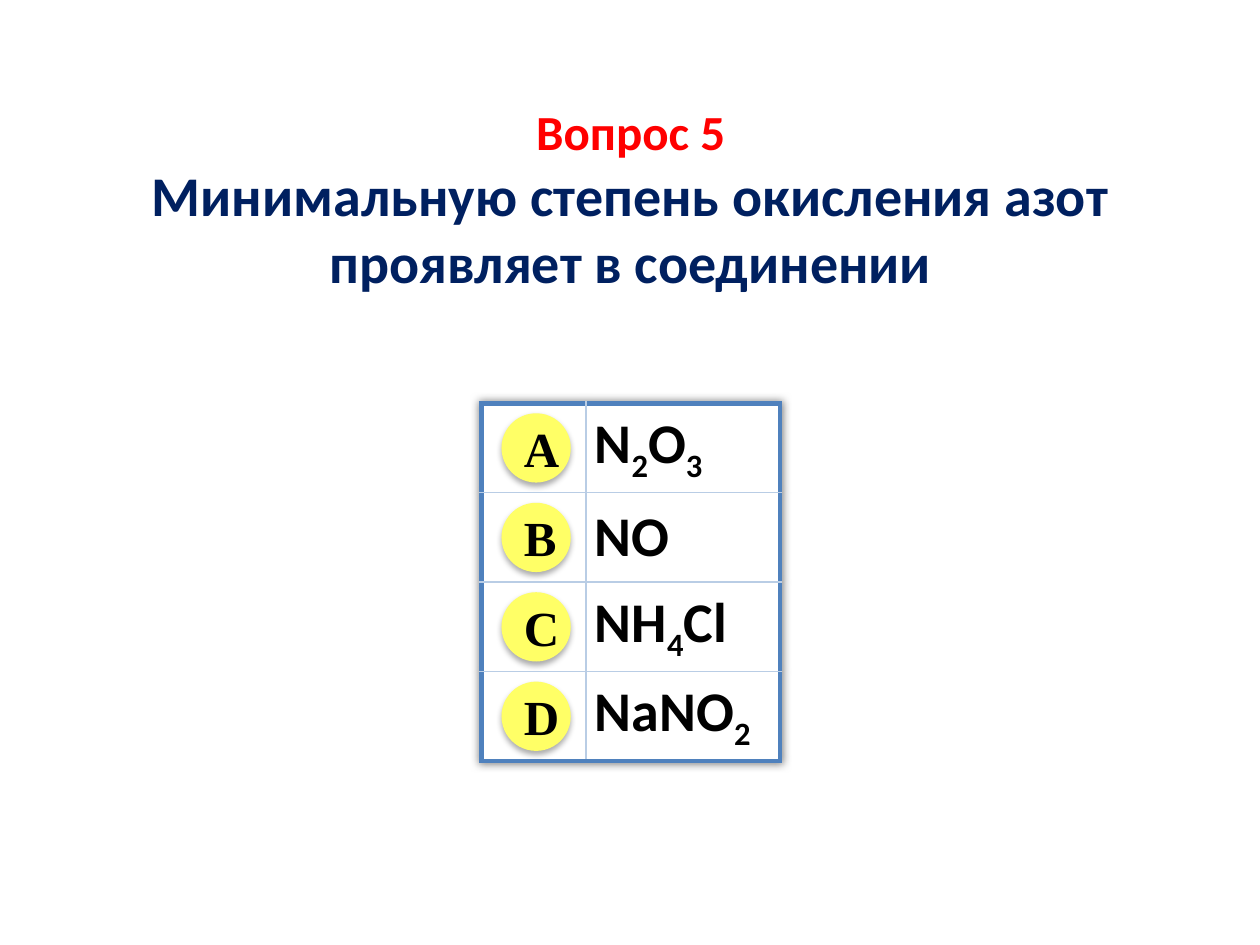
from dataclasses import dataclass
from itertools import groupby

from lxml import etree
from pptx import Presentation
from pptx import util as u
from pptx.dml.color import RGBColor
from pptx.enum import shapes, text
from pptx.oxml.ns import qn


@dataclass(frozen=True)
class Theme:
    body_font: str = "Calibri"
    letter_font: str = "Times New Roman"
    small: int = 28
    large: int = 32
    white: str = "FFFFFF"
    black: str = "000000"
    red: str = "FF0000"
    navy: str = "002060"
    frame: str = "4F81BD"
    grid: str = "B9CDE5"
    badge: str = "FFFF66"


def add_element(parent, tag, **attributes):
    return etree.SubElement(parent, qn(tag), {k: str(v) for k, v in attributes.items()})


def shadow_effect(parent, color, opacity, blur, distance, angle):
    """Append an outer shadow; opacity in percent, lengths in points."""
    effects = add_element(parent, "a:effectLst")
    outer = add_element(effects, "a:outerShdw", blurRad=u.Pt(blur), dist=u.Pt(distance),
                        dir=angle * 60000, algn="ctr", rotWithShape=0)
    add_element(add_element(outer, "a:srgbClr", val=color), "a:alpha", val=opacity * 1000)
    return effects


class QuizSlide:
    def __init__(self, slide, theme):
        self.slide = slide
        self.theme = theme

    def style(self, run, font, size, color):
        run.font.name = font
        run.font.size = u.Pt(size)
        run.font.bold = True
        run.font.color.rgb = RGBColor.from_string(color)

    def fill(self, target, color):
        target.fill.solid()
        target.fill.fore_color.rgb = RGBColor.from_string(color)

    def formula(self, cell, formula):
        """Write a chemical formula with its digits as subscripts."""
        paragraph = cell.text_frame.paragraphs[0]
        for is_index, letters in groupby(formula, str.isdigit):
            run = paragraph.add_run()
            run.text = "".join(letters)
            self.style(run, self.theme.body_font, self.theme.large, self.theme.black)
            if is_index:
                run.font._element.set("baseline", "-25000")

    def borders(self, cell, outer_sides):
        properties = cell._tc.get_or_add_tcPr()
        for side in "LRTB":
            outer = side in outer_sides
            line = add_element(properties, f"a:ln{side}", w=u.Pt(3 if outer else 1))
            solid = add_element(line, "a:solidFill")
            add_element(solid, "a:srgbClr", val=self.theme.frame if outer else self.theme.grid)

    def answers(self, formulas, left, top, widths, row_height):
        last = len(formulas) - 1
        frame = self.slide.shapes.add_table(
            len(formulas), len(widths), u.Inches(left), u.Inches(top),
            u.Inches(sum(widths)), u.Inches(row_height * len(formulas)))
        table = frame.table
        table.first_row = table.horz_banding = False
        properties = table._tbl.tblPr
        properties.insert(0, shadow_effect(properties, self.theme.black, 50, 5, 0, 0))
        for column, width in zip(table.columns, widths):
            column.width = u.Inches(width)
        for row, formula in enumerate(formulas):
            table.rows[row].height = u.Inches(row_height)
            for column in range(len(widths)):
                cell = table.cell(row, column)
                cell.margin_left = cell.margin_right = u.Inches(0.07)
                cell.margin_top = cell.margin_bottom = 0
                cell.vertical_anchor = text.MSO_ANCHOR.MIDDLE
                edges = "LR"[column] + ("T" if row == 0 else "B" if row == last else "")
                self.borders(cell, edges)
                self.fill(cell, self.theme.white)
            self.formula(table.cell(row, 1), formula)

    def badges(self, letters, left, top, size, step):
        group = self.slide.shapes.add_group_shape()
        for row, letter in enumerate(letters):
            badge = group.shapes.add_shape(
                shapes.MSO_SHAPE.OVAL, u.Inches(left), u.Inches(top + row * step),
                u.Inches(size), u.Inches(size))
            self.fill(badge, self.theme.badge)
            badge.line.fill.background()
            shadow_effect(badge._element.spPr, self.theme.black, 32, 3.5, 2.2, 90)
            frame = badge.text_frame
            frame.text = letter
            frame.word_wrap = True
            frame.vertical_anchor = text.MSO_ANCHOR.MIDDLE
            frame.paragraphs[0].alignment = text.PP_ALIGN.CENTER
            self.style(frame.paragraphs[0].runs[0], self.theme.letter_font,
                       self.theme.small, self.theme.black)

    def question(self, number, wording, left, top, width, height):
        box = self.slide.shapes.add_textbox(*map(u.Inches, (left, top, width, height)))
        self.fill(box, self.theme.white)
        frame = box.text_frame
        frame.word_wrap = True
        frame.auto_size = text.MSO_AUTO_SIZE.SHAPE_TO_FIT_TEXT
        frame.text = f"{number}\n{wording}"
        looks = [(self.theme.small, self.theme.red), (self.theme.large, self.theme.navy)]
        for paragraph, (size, color) in zip(frame.paragraphs, looks):
            paragraph.alignment = text.PP_ALIGN.CENTER
            self.style(paragraph.runs[0], self.theme.body_font, size, color)


def main():
    deck = Presentation()
    deck.slide_width, deck.slide_height = u.Inches(10), u.Inches(7.5)
    quiz = QuizSlide(deck.slides.add_slide(deck.slide_layouts[6]), Theme())
    row_height = 0.71
    quiz.answers(["N2O3", "NO", "NH4Cl", "NaNO2"], 3.82, 3.2, [0.83, 1.54], row_height)
    quiz.badges("ABCD", 3.98, 3.28, 0.55, row_height)
    quiz.question("Вопрос 5", "Минимальную степень окисления азот проявляет в соединении",
                  0.24, 0.76, 9.53, 1.65)
    deck.save("out.pptx")


if __name__ == "__main__":
    main()
